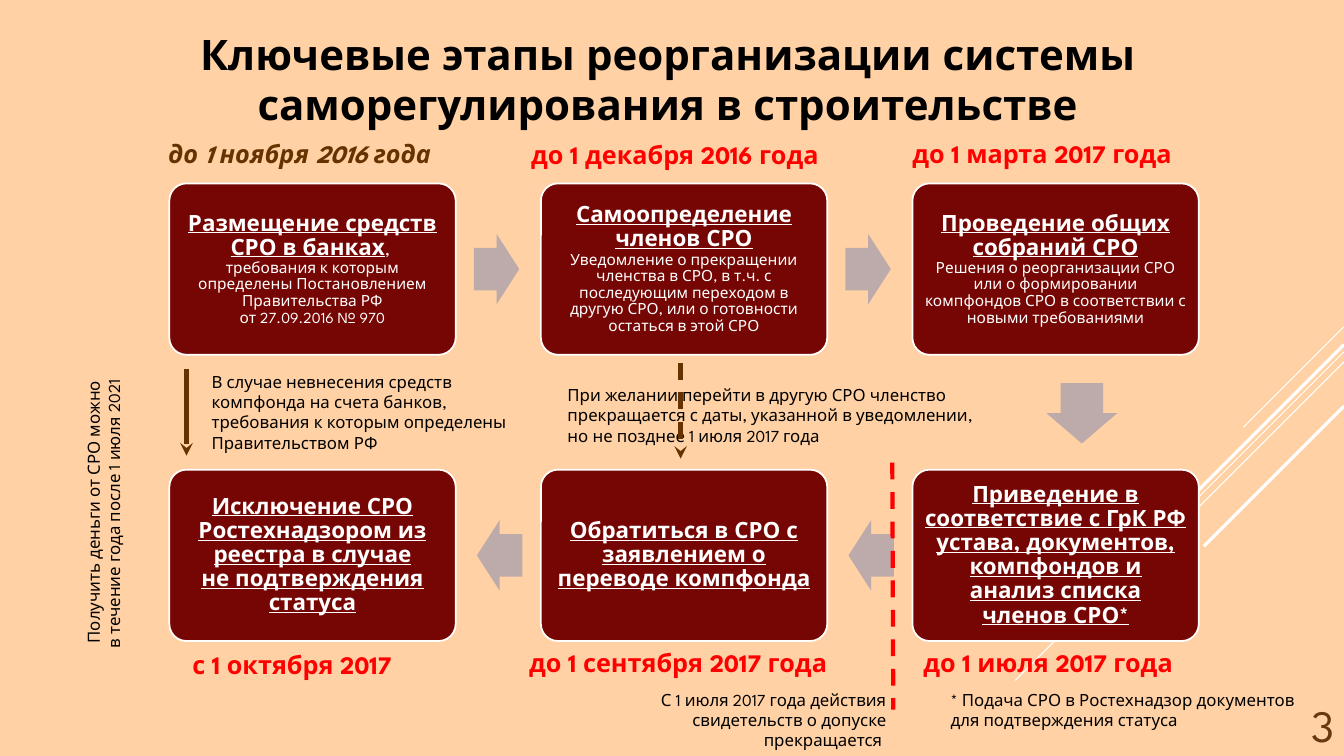
from lxml import etree
from pptx import Presentation
from pptx import util as u
from pptx.dml.color import RGBColor
from pptx.enum import dml, shapes, text
from pptx.oxml.ns import qn

WIDTH, HEIGHT = 13.33, 7.5
FONT = "League Spartan"
COLORS = {"background": "FFD1A4", "box": "760603", "arrow": "BDABAB", "white": "FFFFFF",
          "black": "000000", "red": "FF0000", "brown": "663300", "number": "68380F"}
LEFT, CENTER, RIGHT = text.PP_ALIGN.LEFT, text.PP_ALIGN.CENTER, text.PP_ALIGN.RIGHT

TITLE = "Ключевые этапы реорганизации системы саморегулирования в строительстве"
STAGES = [
    (0, 0, "Размещение средств СРО в банках", ", ",
     "требования к которым определены Постановлением Правительства РФ\nот 27.09.2016 № 970"),
    (1, 0, "Самоопределение членов СРО", "",
     "Уведомление о прекращении членства в СРО, в т.ч. с последующим переходом "
     "в другую СРО, или о готовности остаться в этой СРО"),
    (2, 0, "Проведение общих собраний СРО", "",
     "Решения о реорганизации СРО или о формировании компфондов СРО "
     "в соответствии с новыми требованиями"),
    (2, 1, "Приведение в соответствие с ГрК РФ устава, документов, компфондов "
           "и анализ списка членов СРО*", "", ""),
    (1, 1, "Обратиться в СРО с заявлением о переводе компфонда", "", ""),
    (0, 1, "Исключение СРО Ростехнадзором из реестра в случае\nне подтверждения статуса", "", ""),
]
DATES = [
    ("до 1 ноября 2016 года", 1.57, 1.32, 3.02, "brown", True),
    ("до 1 декабря 2016 года", 5.17, 1.33, 3.2, "red", False),
    ("до 1 марта 2017 года", 8.95, 1.32, 2.95, "red", False),
    ("до 1 июля 2017 года", 9.06, 6.37, 2.75, "red", False),
    ("до 1 сентября 2017 года", 5.15, 6.37, 3.32, "red", False),
    ("с 1 октября 2017", 1.81, 6.39, 2.31, "red", False),
]
NOTES = [
    ("С 1 июля 2017 года действия свидетельств о допуске прекращается ",
     (5.92, 6.79, 2.97, 0.71), RIGHT, 0),
    ("В случае невнесения средств\nкомпфонда на счета банков,\n"
     "требования к которым определены\nПравительством РФ", (2, 3.64, 3.26, 0.91), LEFT, 0),
    ("При желании перейти в другую СРО членство прекращается с даты, указанной в уведомлении,\n"
     "но не позднее 1 июля 2017 года", (5.53, 3.77, 4.41, 0.71), LEFT, 0),
    ("Получить деньги от СРО можно\nв течение года после 1 июля 2021 ",
     (-0.59, 4.83, 3.23, 0.5), CENTER, 270),
    ("* Подача СРО в Ростехнадзор документов для подтверждения статуса",
     (9.33, 6.79, 3.8, 0.5), LEFT, 0),
]
RAYS = [(3.24, 1, 0.75), (3.49, 3.26, 0.75), (3.59, 2.07, 0.75), (3.42, 1.91, 2.25), (4.03, 1.39, 2.25)]
GUIDES = [
    ((8.85, 4.59), (8.86, 7.04), "red", True, False),
    ((1.85, 3.66), (1.85, 4.52), "brown", False, True),
    ((6.75, 3.6), (6.75, 4.55), "brown", True, True),
]
GRID_LEFT, GRID_TOP, COLUMN_STEP, ROW_STEP = 1.68, 1.82, 3.685, 2.84
BOX_WIDTH, BOX_HEIGHT = 2.84, 1.7
ARROW_WIDTH, ARROW_HEIGHT = 0.45, 0.7


def color(name):
    return RGBColor.from_string(COLORS[name])


def inches(*lengths):
    return [u.Inches(length) for length in lengths]


def set_font(font, size, color_name, bold=False, italic=False, underline=False):
    font.name, font.size = FONT, u.Pt(size)
    font.bold, font.italic, font.underline = bold, italic, underline
    font.color.rgb = color(color_name)


def add_text(slide, content, place, size, color_name, align=LEFT, **style):
    box = slide.shapes.add_textbox(*inches(*place))
    box.text_frame.word_wrap = True
    paragraph = box.text_frame.paragraphs[0]
    paragraph.text = content
    paragraph.alignment = align
    set_font(paragraph.font, size, color_name, **style)
    return box


def add_line(slide, start, end, color_name, width, dashed=False, pointed=False):
    line = slide.shapes.add_connector(shapes.MSO_CONNECTOR.STRAIGHT, *inches(*start, *end))
    line.line.color.rgb = color(color_name)
    line.line.width = u.Pt(width)
    if dashed:
        line.line.dash_style = dml.MSO_LINE.DASH
    properties = line.element.spPr
    if pointed:
        etree.SubElement(properties.find(qn("a:ln")), qn("a:tailEnd"), type="stealth")
    etree.SubElement(properties, qn("a:effectLst"))


def add_preset(slide, kind, place, fill):
    shape = slide.shapes.add_shape(kind, *inches(*place))
    shape.shadow.inherit = False
    shape.fill.solid()
    shape.fill.fore_color.rgb = color(fill)
    return shape


def add_runs(paragraph, content, size=None):
    for index, part in enumerate(content.split("\n")):
        if index:
            paragraph.add_line_break()
        run = paragraph.add_run()
        run.text = part
        if size:
            set_font(run.font, size, "white")


def add_stage(slide, column, row, heading, joint, details):
    place = (GRID_LEFT + column * COLUMN_STEP, GRID_TOP + row * ROW_STEP, BOX_WIDTH, BOX_HEIGHT)
    box = add_preset(slide, shapes.MSO_SHAPE.ROUNDED_RECTANGLE, place, "box")
    box.adjustments[0] = 0.1
    box.line.color.rgb = color("white")
    box.line.width = u.Pt(1.25)
    frame = box.text_frame
    frame.word_wrap = True
    frame.vertical_anchor = text.MSO_ANCHOR.MIDDLE
    side = 0 if (column, row) == (0, 1) else 0.07
    frame.margin_left = frame.margin_right = u.Inches(side)
    frame.margin_top = frame.margin_bottom = u.Inches(0.07)
    paragraph = frame.paragraphs[0]
    paragraph.alignment = CENTER
    paragraph.line_spacing = 0.9
    set_font(paragraph.font, 16, "white", bold=True, underline=True)
    add_runs(paragraph, heading)
    if joint:
        add_runs(paragraph, joint, 13)
    if details:
        paragraph.add_line_break()
        add_runs(paragraph, details, 11)


def add_arrow(slide, place, rotation):
    arrow = add_preset(slide, shapes.MSO_SHAPE.RIGHT_ARROW, place, "arrow")
    arrow.line.fill.background()
    arrow.adjustments[0], arrow.adjustments[1] = 0.6, 0.5
    arrow.rotation = rotation


def main():
    presentation = Presentation()
    presentation.slide_width, presentation.slide_height = inches(WIDTH, HEIGHT)
    slide = presentation.slides.add_slide(presentation.slide_layouts[5])
    slide.background.fill.solid()
    slide.background.fill.fore_color.rgb = color("background")

    for top, reach, width in RAYS:
        add_line(slide, (WIDTH, top), (WIDTH - reach, top + reach), "white", width)

    title = slide.shapes.title
    title.left, title.top, title.width, title.height = inches(0, 0.23, 13.25, 0.99)
    title.text_frame.auto_size = text.MSO_AUTO_SIZE.NONE
    title.text_frame.vertical_anchor = text.MSO_ANCHOR.TOP
    title.text_frame.text = TITLE
    paragraph = title.text_frame.paragraphs[0]
    paragraph.alignment = CENTER
    set_font(paragraph.font, 30, "black", bold=True)

    for stage in STAGES:
        add_stage(slide, *stage)
    for row, (offset, rotation) in enumerate([(3.02, 0), (3.05, 180)]):
        for column in range(2):
            left = GRID_LEFT + column * COLUMN_STEP + offset
            top = GRID_TOP + row * ROW_STEP + (BOX_HEIGHT - ARROW_HEIGHT) / 2
            add_arrow(slide, (left, top, ARROW_WIDTH, ARROW_HEIGHT), rotation)
    add_arrow(slide, (10.43, 3.75, 0.6, ARROW_HEIGHT), 90)

    for content, left, top, width, color_name, italic in DATES:
        add_text(slide, content, (left, top, width, 0.4), 18, color_name, bold=True, italic=italic)
    for content, place, align, rotation in NOTES:
        add_text(slide, content, place, 12, "black", align).rotation = rotation
    for start, end, color_name, dashed, pointed in GUIDES:
        add_line(slide, start, end, color_name, 3, dashed, pointed)

    number = add_text(slide, "3", (12.08, 6.77, 1.25, 0.73), 32, "number", RIGHT)
    number.text_frame.vertical_anchor = text.MSO_ANCHOR.BOTTOM
    presentation.save("out.pptx")


if __name__ == "__main__":
    main()
